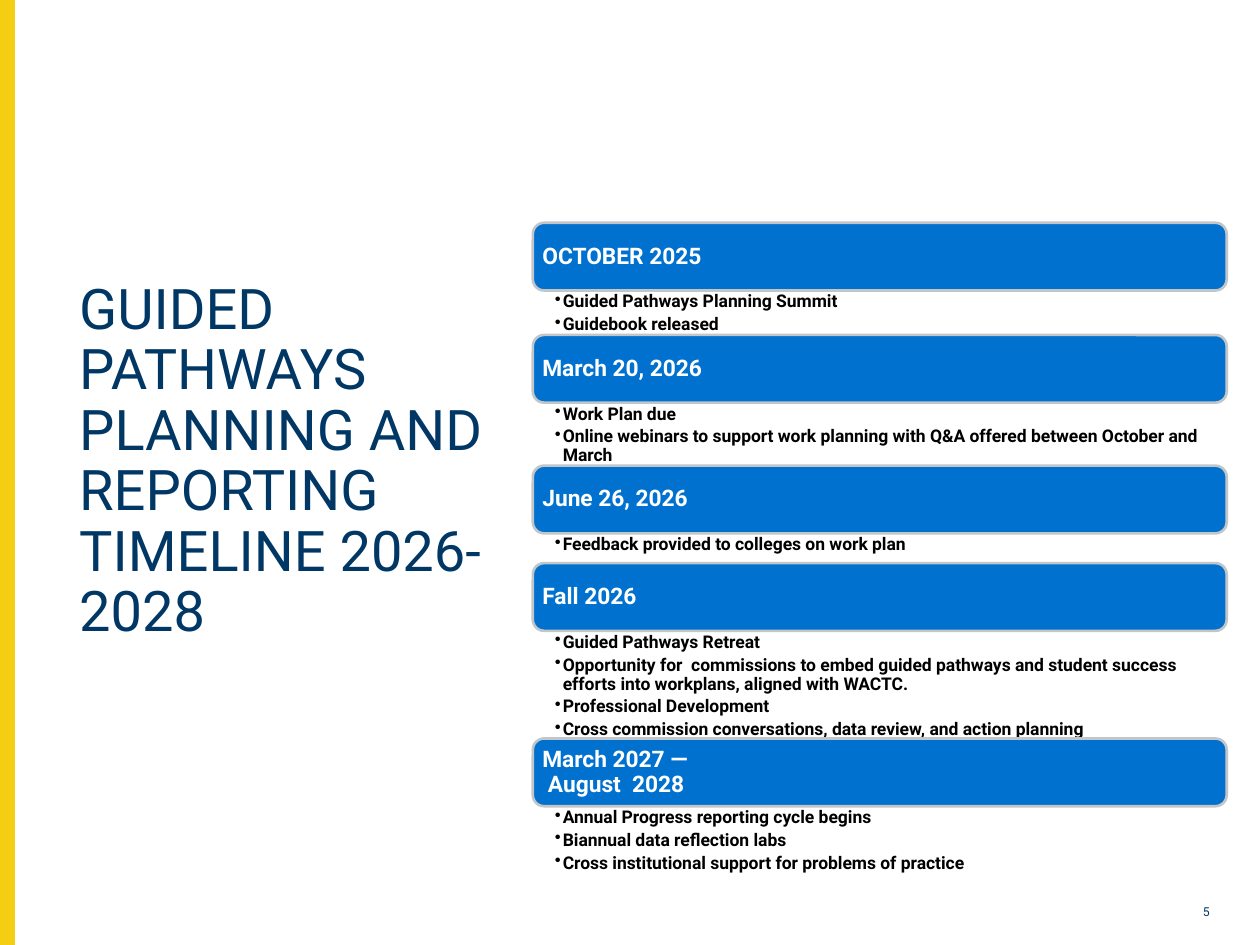
from pptx import Presentation
from pptx.dml.color import RGBColor
from pptx.enum.shapes import MSO_SHAPE
from pptx.enum.text import MSO_ANCHOR, PP_ALIGN
from pptx.oxml.ns import qn
from pptx.util import Pt
from lxml import etree

RECTANGLE, ROUNDED = MSO_SHAPE.RECTANGLE, MSO_SHAPE.ROUNDED_RECTANGLE
TOP, MIDDLE, BOTTOM = MSO_ANCHOR.TOP, MSO_ANCHOR.MIDDLE, MSO_ANCHOR.BOTTOM
LEFT, RIGHT = PP_ALIGN.LEFT, PP_ALIGN.RIGHT

FONT = "Roboto"
NAVY, BLUE, GRAY, YELLOW = "003764", "0071CE", "C3C6C8", "F4CE12"
WHITE, BLACK = "FFFFFF", "000000"
TIMELINE_LEFT, TIMELINE_TOP, TIMELINE_WIDTH = 304.5, 127.3, 396.5
BAR_HEIGHT = 38.7
DEFAULT_INSETS = (7.2, 3.6, 7.2, 3.6)

MILESTONES = [
    ("OCTOBER 2025", 25.4, ["Guided Pathways Planning Summit", "Guidebook released"]),
    ("March 20, 2026", 36, [
        "Work Plan due",
        "Online webinars to support work planning with Q&A offered between October and March",
    ]),
    ("June 26, 2026", 17, ["Feedback provided to colleges on work plan"]),
    ("Fall 2026", 61.5, [
        "Guided Pathways Retreat",
        "Opportunity for  commissions to embed guided pathways and student success "
        "efforts into workplans, aligned with WACTC.",
        "Professional Development",
        "Cross commission conversations, data review, and action planning",
    ]),
    ("March 2027 —\v August  2028", 38.2, [
        "Annual Progress reporting cycle begins",
        "Biannual data reflection labs",
        "Cross institutional support for problems of practice",
    ]),
]


def color(value):
    """Turn a hex string into a colour."""
    return RGBColor.from_string(value)


def add_bullet(paragraph):
    """Give a paragraph a hanging bullet."""
    properties = paragraph._p.get_or_add_pPr()
    properties.set("marL", str(Pt(4.5)))
    properties.set("indent", str(-Pt(4.5)))
    etree.SubElement(properties, qn("a:buChar")).set("char", "•")


def write_text(shape, lines, size, text_color, bold=False, anchor=TOP,
               alignment=LEFT, insets=DEFAULT_INSETS, space_after=0, bulleted=False):
    """Fill a shape with formatted paragraphs."""
    frame = shape.text_frame
    frame.word_wrap = True
    frame.vertical_anchor = anchor
    frame.margin_left, frame.margin_top, frame.margin_right, frame.margin_bottom = map(Pt, insets)
    frame.text = "\n".join(lines)
    for paragraph in frame.paragraphs:
        if bulleted:
            add_bullet(paragraph)
        paragraph.alignment = alignment
        paragraph.line_spacing = 0.9
        paragraph.space_after = Pt(space_after)
        for run in paragraph.runs:
            run.font.name = FONT
            run.font.size = Pt(size)
            run.font.bold = bold
            run.font.color.rgb = color(text_color)


def add_text(slide, left, top, width, height, lines, size, text_color, **options):
    """Add a text box."""
    box = slide.shapes.add_textbox(Pt(left), Pt(top), Pt(width), Pt(height))
    write_text(box, lines, size, text_color, **options)


def add_block(slide, kind, left, top, width, height, fill, line, line_width):
    """Add a filled and outlined shape without shadow."""
    shape = slide.shapes.add_shape(kind, Pt(left), Pt(top), Pt(width), Pt(height))
    shape.shadow.inherit = False
    shape.fill.solid()
    shape.fill.fore_color.rgb = color(fill)
    shape.line.color.rgb = color(line)
    shape.line.width = Pt(line_width)
    return shape


def add_timeline(slide):
    """Stack each milestone bar above its details."""
    top = TIMELINE_TOP
    for heading, details_height, details in MILESTONES:
        bar = add_block(slide, ROUNDED, TIMELINE_LEFT, top, TIMELINE_WIDTH, BAR_HEIGHT,
                        BLUE, GRAY, 1.5)
        write_text(bar, [heading], 13, WHITE, bold=True, anchor=MIDDLE,
                   insets=(3.6, 3.6, 3.6, 3.6))
        top += BAR_HEIGHT
        add_text(slide, TIMELINE_LEFT, top, TIMELINE_WIDTH, details_height, details, 10, BLACK,
                 bold=True, insets=(12.6, 1.3, 7.2, 1.3), space_after=2.2, bulleted=True)
        top += details_height


def main():
    """Build and save the timeline slide."""
    presentation = Presentation()
    presentation.slide_width, presentation.slide_height = Pt(720), Pt(540)
    slide = presentation.slides.add_slide(presentation.slide_layouts[6])
    add_block(slide, RECTANGLE, 0, 0, 8, 540, YELLOW, YELLOW, 1)
    add_text(slide, 38.2, 109.4, 249, 262,
             ["GUIDED PATHWAYS PLANNING AND REPORTING TIMELINE 2026-2028"],
             32, NAVY, anchor=BOTTOM)
    add_timeline(slide)
    add_text(slide, 662.4, 514, 36, 15, ["5"], 7, NAVY, alignment=RIGHT)
    presentation.save("out.pptx")


if __name__ == "__main__":
    main()
